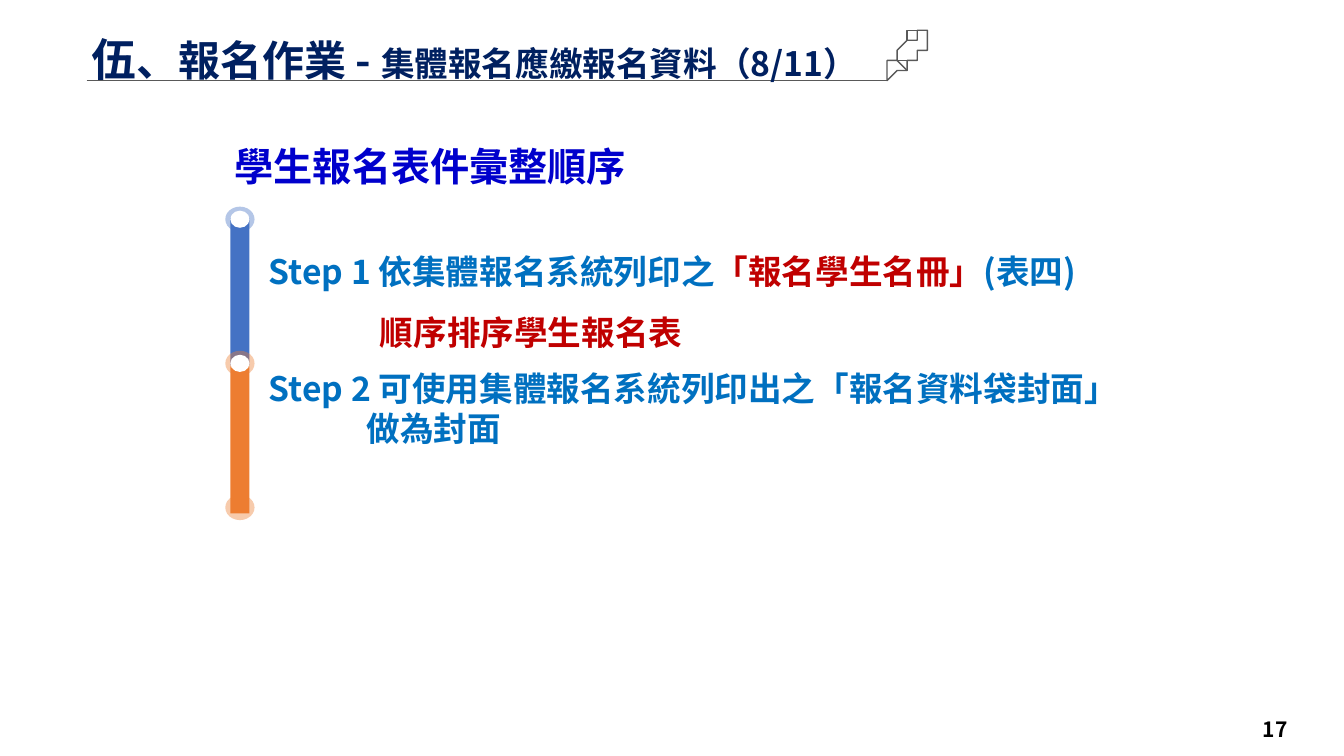
import dataclasses
import typing

import lxml.etree
import pptx
import pptx.dml.color
import pptx.enum.shapes
import pptx.enum.text
import pptx.oxml.ns
import pptx.util

FONT = "Noto Sans CJK SC"
COLORS = {
    "navy": "002060", "royal": "0000CC", "step": "0070C0", "accent": "C00000",
    "black": "000000", "white": "FFFFFF", "pen": "595959",
    "first": "4472C4", "second": "ED7D31",
}

# Grid: 133.3 columns by 75 rows
CELL = pptx.util.Inches(0.1)
COLUMNS, ROWS = 133.33, 75
ALIGN = pptx.enum.text.PP_ALIGN
ANCHOR = pptx.enum.text.MSO_ANCHOR
SHAPE = pptx.enum.shapes.MSO_SHAPE


@dataclasses.dataclass
class Words:
    text: str
    size: float
    color: str


@dataclasses.dataclass
class Line:
    words: list[Words]
    indent: float = 0
    formats: dict[str, typing.Any] = dataclasses.field(default_factory=dict)


@dataclasses.dataclass
class Block:
    column: float
    row: float
    width: float
    height: float
    lines: list[Line]
    frame: dict[str, typing.Any] = dataclasses.field(default_factory=dict)


@dataclasses.dataclass
class Mark:
    kind: typing.Any
    center: tuple[float, float]
    size: tuple[float, float]
    color: str
    opacity: int = 100


def grid(count: float) -> int:
    return round(count * CELL)


def rgb(name: str) -> pptx.dml.color.RGBColor:
    return pptx.dml.color.RGBColor.from_string(COLORS[name])


def apply(target: typing.Any, formats: dict[str, typing.Any]) -> None:
    for name, value in formats.items():
        setattr(target, name, value)


def add_xml(parent: typing.Any, tag: str, **attributes: str) -> None:
    child = lxml.etree.SubElement(parent, pptx.oxml.ns.qn(tag))
    for name, value in attributes.items():
        child.set(name, value)


def draw_block(slide: typing.Any, block: Block) -> None:
    box = slide.shapes.add_textbox(
        *map(grid, (block.column, block.row, block.width, block.height)))
    apply(box.text_frame, {"word_wrap": True} | block.frame)
    for number, line in enumerate(block.lines):
        paragraph = (box.text_frame.add_paragraph() if number
                     else box.text_frame.paragraphs[0])
        apply(paragraph, line.formats)
        if line.indent:
            paragraph._p.get_or_add_pPr().set("marL", str(grid(line.indent)))
        for words in line.words:
            run = paragraph.add_run()
            run.text = words.text
            apply(run.font, {"name": FONT, "size": pptx.util.Pt(words.size), "bold": True})
            run.font.color.rgb = rgb(words.color)
            add_xml(run._r.get_or_add_rPr(), "a:ea", typeface=FONT)


def draw_mark(slide: typing.Any, mark: Mark) -> None:
    (x, y), (width, height) = mark.center, mark.size
    shape = slide.shapes.add_shape(
        mark.kind, *map(grid, (x - width / 2, y - height / 2, width, height)))
    shape.shadow.inherit = False
    shape.line.fill.background()
    shape.fill.solid()
    shape.fill.fore_color.rgb = rgb(mark.color)
    if mark.opacity < 100:
        color = shape._element.spPr.find(".//" + pptx.oxml.ns.qn("a:srgbClr"))
        add_xml(color, "a:alpha", val=str(mark.opacity * 1000))


def curve(points: list[tuple[float, float]], steps: int = 10) -> list[tuple[float, float]]:
    """Return points along a chain of cubic curves, or a straight line's end."""
    if len(points) == 2:
        return points[1:]
    result = []
    for first in range(0, len(points) - 1, 3):
        corners = points[first:first + 4]
        for step in range(1, steps + 1):
            t = step / steps
            weights = ((1 - t) ** 3, 3 * t * (1 - t) ** 2, 3 * t * t * (1 - t), t ** 3)
            result.append(tuple(sum(w * c[axis] for w, c in zip(weights, corners))
                                for axis in (0, 1)))
    return result


def draw_pen(slide: typing.Any, strokes: list[list[tuple[float, float]]]) -> None:
    builder = slide.shapes.build_freeform(*strokes[0][0], scale=CELL)
    for number, stroke in enumerate(strokes):
        if number:
            builder.move_to(*stroke[0])
        builder.add_line_segments(curve(stroke), close=stroke[0] == stroke[-1])
    pen = builder.convert_to_shape()
    pen.shadow.inherit = False
    pen.fill.background()
    pen.line.color.rgb = rgb("pen")
    pen.line.width = pptx.util.Pt(1)


def draw_rule(slide: typing.Any, start: float, end: float, row: float) -> None:
    rule = slide.shapes.add_connector(
        pptx.enum.shapes.MSO_CONNECTOR.STRAIGHT, *map(grid, (start, row, end, row)))
    rule.line.color.rgb = rgb("pen")
    rule.line.width = pptx.util.Pt(0.5)
    add_xml(rule._element.spPr, "a:effectLst")


PEN_STROKES = [
    [(89.5, 6.7), (88.6, 5.9)],
    [(88.8, 5.6), (89.7, 6.5)],
    [(92.3, 2.9), (92, 2.6), (90.7, 3.5), (89.4, 4.9),
     (88.4, 5.9), (87.6, 7), (87.5, 7.5),
     (87.5, 7.5), (87.8, 7.9), (87.8, 7.9),
     (88.4, 7.8), (89.4, 7), (90.5, 5.9),
     (91.8, 4.6), (92.6, 3.2), (92.3, 2.9)],
    [(87.7, 7.7), (87.4, 8)],
    [(92.2, 3.7), (92.2, 3.7), (91.9, 3.4), (91.6, 3.1),
     (91.6, 3.1), (91.1, 2.6), (89.5, 4.1)],
]

# Timeline: two bars, three rings, two white centres
TIMELINE, FIRST_RING, RING_STEP = 23.8, 21.75, 14.3
BAR_SIZE, RING_SIZE, HOLE_SIZE = (1.9, 14.6), (2.9, 2.5), (1.9, 1.7)
MARKS = [Mark(SHAPE.RECTANGLE, (TIMELINE, 28.95 + 14.7 * number), BAR_SIZE, color)
         for number, color in enumerate(("first", "second"))]
for number, color in enumerate(("first", "second", "second")):
    center = (TIMELINE, FIRST_RING + RING_STEP * number)
    MARKS.append(Mark(SHAPE.OVAL, center, RING_SIZE, color, 40))
    if number < 2:
        MARKS.append(Mark(SHAPE.OVAL, center, HOLE_SIZE, "white"))

BLOCKS = [
    Block(8.1, 3.3, 78.9, 4.8, [Line([
        Words("伍", 32, "navy"), Words("、報名作業 - ", 30, "navy"),
        Words("集體報名應繳報名資料（8/11）", 24, "navy")], formats={"line_spacing": 0.9})]),
    Block(25.7, 20.9, 87.8, 25.9, [
        Line([Words("Step 1 依集體報名系統列印之", 24, "step"),
              Words("「報名學生名冊」", 24, "accent"), Words("(表四)", 24, "step")]),
        Line([Words("順序排序學生報名表", 24, "accent")], 11,
             {"space_before": pptx.util.Pt(15)}),
        Line([Words("Step 2 可使用集體報名系統列印出之「報名資料袋封面」", 24, "step")],
             formats={"space_before": pptx.util.Pt(11)}),
        Line([Words("做為封面", 24, "step")], 9.7),
    ], {"vertical_anchor": ANCHOR.MIDDLE, "margin_top": grid(2.2)}),
    Block(22.3, 13.6, 41.3, 5.7, [Line([Words("學生報名表件彙整順序", 28, "royal")])],
          {"word_wrap": False}),
    Block(104.8, 70.9, 23.9, 2.9, [
        Line([Words("17", 15, "black")], formats={"alignment": ALIGN.RIGHT})],
        {"vertical_anchor": ANCHOR.MIDDLE}),
]


def main() -> None:
    deck = pptx.Presentation()
    apply(deck, {"slide_width": grid(COLUMNS), "slide_height": grid(ROWS)})
    slide = deck.slides.add_slide(deck.slide_layouts[6])
    # Heading ornament
    draw_rule(slide, 8.6, 87.3, 8)
    draw_pen(slide, PEN_STROKES)
    # Texts and timeline
    for block in BLOCKS:
        draw_block(slide, block)
    for mark in MARKS:
        draw_mark(slide, mark)
    deck.save("out.pptx")


if __name__ == "__main__":
    main()
